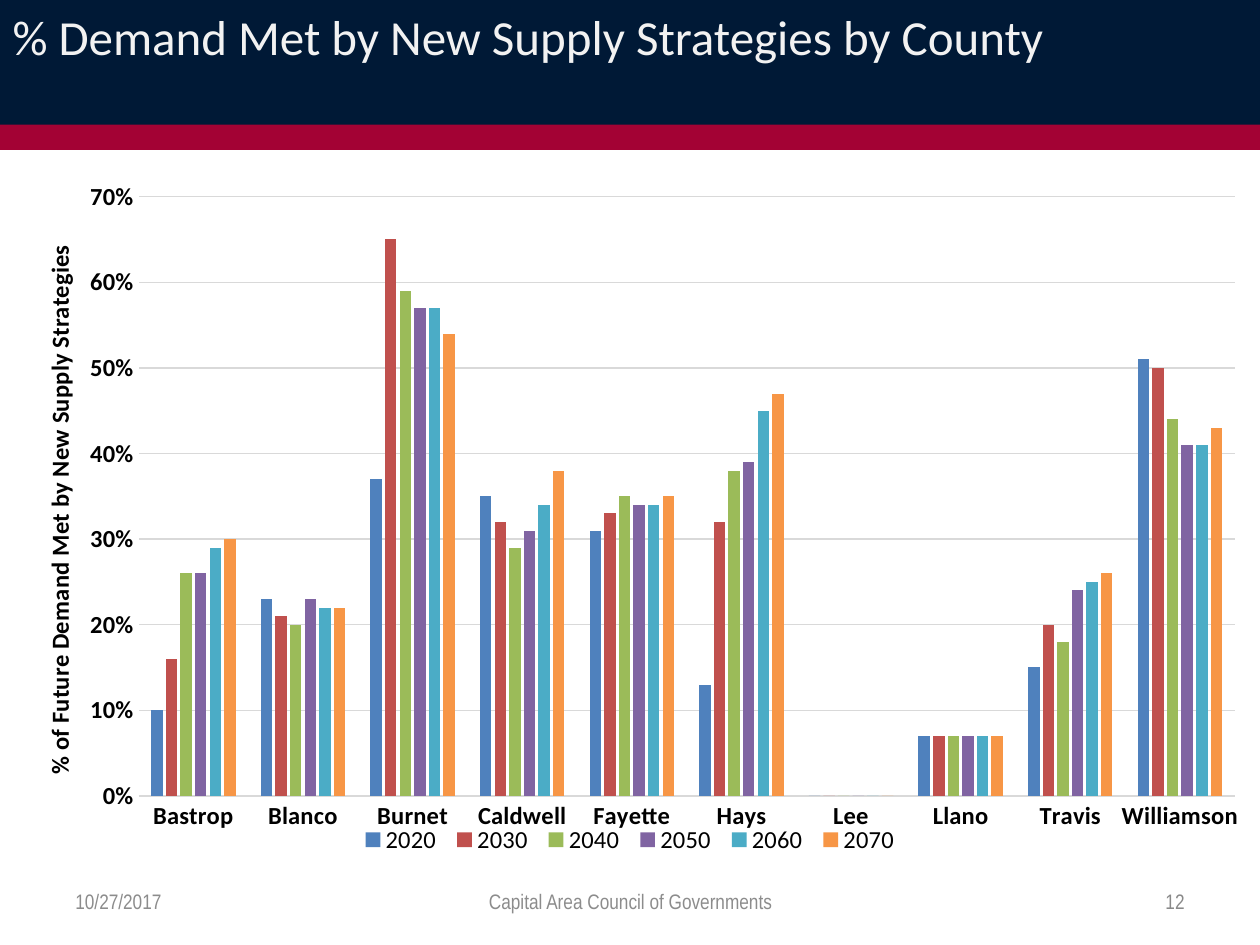
import pptx
import pptx.util
import pptx.chart.data
from dataclasses import dataclass
from lxml import etree
from pptx.dml.color import RGBColor
from pptx.enum.chart import XL_CHART_TYPE, XL_LEGEND_POSITION, XL_TICK_MARK
from pptx.enum.shapes import MSO_SHAPE
from pptx.enum.text import MSO_ANCHOR, MSO_AUTO_SIZE, PP_ALIGN
from pptx.oxml.ns import qn

WIDTH, HEIGHT = 10, 7.5
GRID_GREY = "D9D9D9"


@dataclass
class Band:
    top: float
    height: float
    color: str


@dataclass
class Footer:
    left: float
    width: float
    text: str
    align: PP_ALIGN
    color: str


@dataclass
class Series:
    year: str
    values: tuple
    color: str


BANDS = [Band(0, 1, "001936"), Band(0.99, 0.2, "A30234")]

FOOTERS = [
    Footer(0.5, 2.33, "10/27/2017", PP_ALIGN.LEFT, "8C8C8C"),
    Footer(3.42, 3.17, "Capital Area Council of Governments", PP_ALIGN.CENTER, "8C8C8C"),
    Footer(7.17, 2.33, "12", PP_ALIGN.RIGHT, "898989"),
]

COUNTIES = ["Bastrop", "Blanco", "Burnet", "Caldwell", "Fayette",
            "Hays", "Lee", "Llano", "Travis", "Williamson"]

SERIES = [
    Series("2020", (0.1, 0.23, 0.37, 0.35, 0.31, 0.13, 0, 0.07, 0.15, 0.51), "4F81BD"),
    Series("2030", (0.16, 0.21, 0.65, 0.32, 0.33, 0.32, 0, 0.07, 0.2, 0.5), "C0504D"),
    Series("2040", (0.26, 0.2, 0.59, 0.29, 0.35, 0.38, 0, 0.07, 0.18, 0.44), "9BBB59"),
    Series("2050", (0.26, 0.23, 0.57, 0.31, 0.34, 0.39, 0, 0.07, 0.24, 0.41), "8064A2"),
    Series("2060", (0.29, 0.22, 0.57, 0.34, 0.34, 0.45, 0, 0.07, 0.25, 0.41), "4BACC6"),
    Series("2070", (0.3, 0.22, 0.54, 0.38, 0.35, 0.47, 0, 0.07, 0.26, 0.43), "F79646"),
]


def rgb(color: str) -> RGBColor:
    return RGBColor.from_string(color)


def box(left: float, top: float, width: float, height: float) -> list:
    return [pptx.util.Inches(v) for v in (left, top, width, height)]


def set_font(font, size: float, color: str, name: str = "Calibri", bold: bool = False) -> None:
    font.size, font.name, font.bold = pptx.util.Pt(size), name, bold
    font.color.rgb = rgb(color)


def set_line(line, color: str) -> None:
    line.color.rgb = rgb(color)
    line.width = pptx.util.Pt(0.75)


def add_band(s, band: Band) -> None:
    sp = s.shapes.add_shape(MSO_SHAPE.RECTANGLE, *box(0, band.top, WIDTH, band.height))
    sp.shadow.inherit = False
    sp.fill.solid()
    sp.fill.fore_color.rgb = rgb(band.color)
    sp.line.fill.background()


def add_title(s, text: str) -> None:
    sp = s.shapes.title
    sp.left, sp.top, sp.width, sp.height = box(0, 0, 8.75, 1)
    tf = sp.text_frame
    tf.text = text
    tf.auto_size = MSO_AUTO_SIZE.NONE
    tf.vertical_anchor = MSO_ANCHOR.TOP
    p = tf.paragraphs[0]
    p.alignment = PP_ALIGN.LEFT
    set_font(p.font, 28, "F2F2F2")
    # Bring the title in front of the bands
    sp.element.getparent().append(sp.element)


def add_footer(s, footer: Footer) -> None:
    tf = s.shapes.add_textbox(*box(footer.left, 6.95, footer.width, 0.4)).text_frame
    tf.word_wrap = True
    tf.vertical_anchor = MSO_ANCHOR.MIDDLE
    p = tf.paragraphs[0]
    p.text, p.alignment = footer.text, footer.align
    set_font(p.font, 12, footer.color, "Arial Narrow")


def place(parent, index: int, inner: bool = False, **shares: float) -> None:
    """Give a chart part a fixed place, as shares of the chart's size."""
    for old in parent.findall(qn("c:layout")):
        parent.remove(old)
    layout = etree.Element(qn("c:layout"))
    manual = etree.SubElement(layout, qn("c:manualLayout"))
    if inner:
        etree.SubElement(manual, qn("c:layoutTarget")).set("val", "inner")
    for mode in ("xMode", "yMode"):
        etree.SubElement(manual, qn(f"c:{mode}")).set("val", "edge")
    for key, share in shares.items():
        etree.SubElement(manual, qn(f"c:{key}")).set("val", str(share))
    parent.insert(index, layout)


def add_demand_chart(s) -> None:
    data = pptx.chart.data.CategoryChartData(number_format="0%")
    data.categories = COUNTIES
    for series in SERIES:
        data.add_series(series.year, series.values)
    chart = s.shapes.add_chart(
        XL_CHART_TYPE.COLUMN_CLUSTERED, *box(0, 1.33, WIDTH, 5.8), data).chart
    chart.has_title = False
    set_font(chart.font, 10, "000000")

    # Columns
    plot = chart.plots[0]
    plot.gap_width, plot.overlap, plot.vary_by_categories = 219, -27, False
    for column, series in zip(plot.series, SERIES):
        column.format.fill.solid()
        column.format.fill.fore_color.rgb = rgb(series.color)
    place(chart.element.find(".//" + qn("c:plotArea")), 0, inner=True,
          x=0.11, y=0.04, w=0.87, h=0.82)

    # Axes
    cat, val = chart.category_axis, chart.value_axis
    for axis in (cat, val):
        axis.major_tick_mark = axis.minor_tick_mark = XL_TICK_MARK.NONE
        set_font(axis.tick_labels.font, 14, "000000", bold=True)
    set_line(cat.format.line, GRID_GREY)
    set_line(val.major_gridlines.format.line, GRID_GREY)
    val.format.line.fill.background()
    val.minimum_scale, val.maximum_scale, val.major_unit = 0, 0.7, 0.1
    val.tick_labels.number_format = "0%"
    val.tick_labels.number_format_is_linked = False

    # Value axis title, read upwards
    tf = val.axis_title.text_frame
    tf.text = "% of Future Demand Met by New Supply Strategies"
    set_font(tf.paragraphs[0].font, 14, "000000", bold=True)
    title = val.axis_title._element
    title.find(".//" + qn("a:bodyPr")).set("rot", "-5400000")
    place(title, 1, x=0.03, y=0.1)

    # Legend
    chart.has_legend = True
    legend = chart.legend
    legend.position = XL_LEGEND_POSITION.BOTTOM
    legend.include_in_layout = False
    set_font(legend.font, 14, "000000")
    place(legend._element, 1, x=0.28, y=0.89, w=0.44, h=0.06)


def main() -> None:
    prs = pptx.Presentation()
    prs.slide_width = pptx.util.Inches(WIDTH)
    prs.slide_height = pptx.util.Inches(HEIGHT)
    s = prs.slides.add_slide(prs.slide_layouts[5])
    for band in BANDS:
        add_band(s, band)
    add_title(s, "% Demand Met by New Supply Strategies by County")
    for footer in FOOTERS:
        add_footer(s, footer)
    add_demand_chart(s)
    prs.save("out.pptx")


if __name__ == "__main__":
    main()
